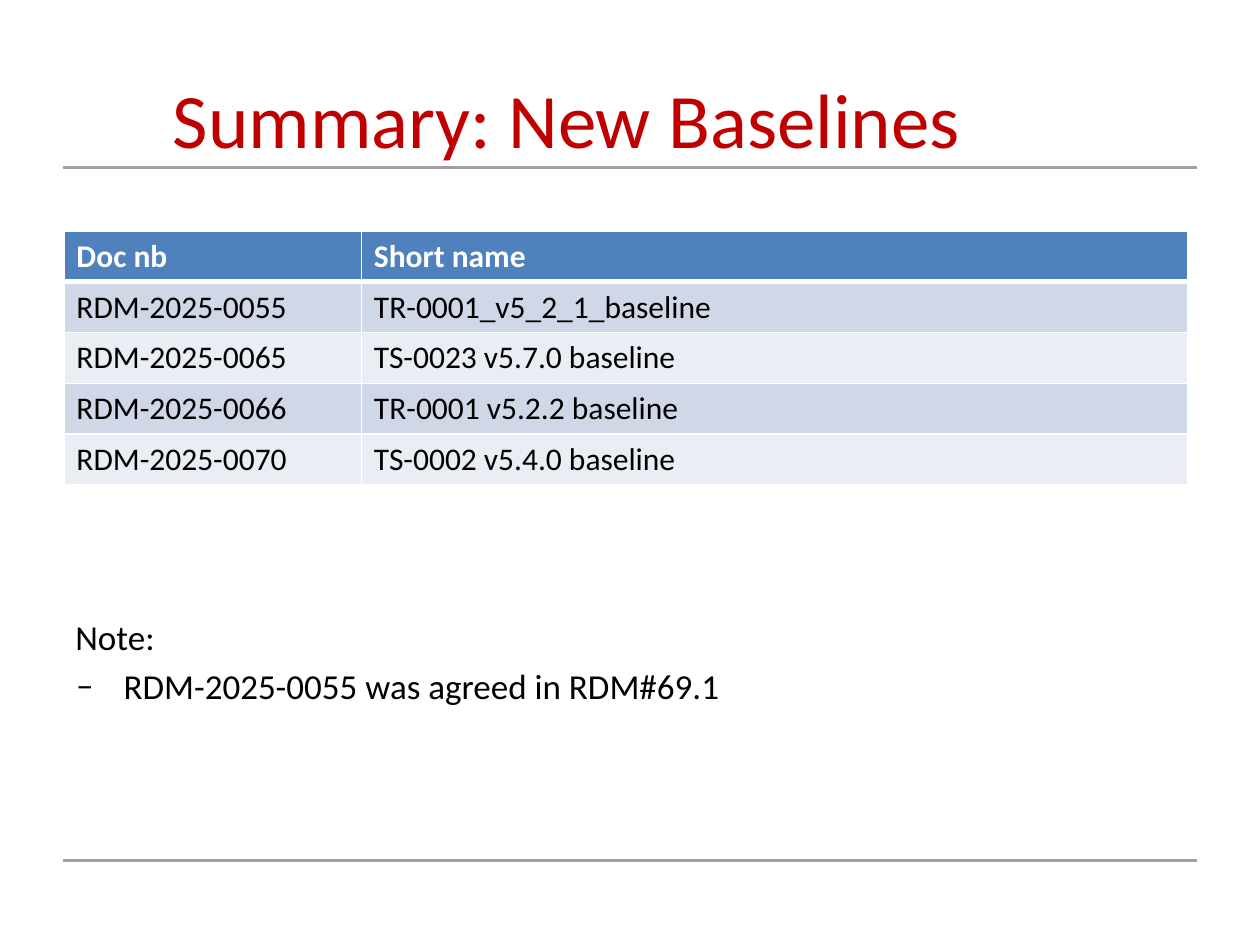
"""Build the summary slide that lists the new baselines."""
from typing import NamedTuple

import lxml.etree
import pptx
import pptx.dml.color
import pptx.enum.shapes
import pptx.enum.text
import pptx.oxml
import pptx.oxml.ns
import pptx.util

Pt = pptx.util.Pt
qn = pptx.oxml.ns.qn

FONT = "Calibri"
COLOURS = {
    "title": "C00000",
    "rule": "A0A0A3",
    "header": "4F81BD",
    "odd_row": "D0D8E8",
    "even_row": "E9EDF4",
    "white": "FFFFFF",
    "black": "000000",
}


class Baseline(NamedTuple):
    document: str
    short_name: str


class Note(NamedTuple):
    text: str
    left_margin: float
    indent: float
    bullet: str = ""


HEADER = Baseline("Doc nb", "Short name")
BASELINES = [
    Baseline("RDM-2025-0055", "TR-0001_v5_2_1_baseline"),
    Baseline("RDM-2025-0065", "TS-0023 v5.7.0 baseline"),
    Baseline("RDM-2025-0066", "TR-0001 v5.2.2 baseline"),
    Baseline("RDM-2025-0070", "TS-0002 v5.4.0 baseline"),
]
NOTES = [
    Note("Note:", 6.5, 0),
    Note("RDM-2025-0055 was agreed in RDM#69.1", 34, -27, "–"),
]
RULE_TOPS = [95.8, 491.8]
COLUMN_WIDTHS = [170, 472]
ROW_HEIGHT = 29


def colour(name: str) -> pptx.dml.color.RGBColor:
    return pptx.dml.color.RGBColor.from_string(COLOURS[name])


def format_runs(paragraph, size: float, colour_name: str, bold: bool = False) -> None:
    for run in paragraph.runs:
        run.font.name = FONT
        run.font.size = Pt(size)
        run.font.bold = bold
        run.font.color.rgb = colour(colour_name)


def add_text_frame(slide, left: float, top: float, width: float, height: float):
    shape = slide.shapes.add_textbox(Pt(left), Pt(top), Pt(width), Pt(height))
    shape.text_frame.word_wrap = True
    return shape.text_frame


def add_rule(slide, top: float) -> None:
    rule = slide.shapes.add_connector(
        pptx.enum.shapes.MSO_CONNECTOR.STRAIGHT, Pt(36), Pt(top), Pt(684), Pt(top)
    )
    rule.line.color.rgb = colour("rule")
    rule.line.width = Pt(1.75)
    lxml.etree.SubElement(rule._element.spPr, qn("a:effectLst"))


def add_title(slide, text: str) -> None:
    text_frame = add_text_frame(slide, 0, 36, 648, 90)
    text_frame.margin_top = Pt(5)
    text_frame.text = text
    paragraph = text_frame.paragraphs[0]
    paragraph.alignment = pptx.enum.text.PP_ALIGN.CENTER
    format_runs(paragraph, 44, "title")


def set_borders(cell, widths: dict[str, float]) -> None:
    properties = cell._tc.get_or_add_tcPr()
    for position, (side, width) in enumerate(widths.items()):
        line = lxml.etree.Element(qn(f"a:{side}"), w=str(Pt(width)))
        fill = lxml.etree.SubElement(line, qn("a:solidFill"))
        lxml.etree.SubElement(fill, qn("a:srgbClr"), val=COLOURS["white"])
        properties.insert(position, line)


def add_baseline_table(slide) -> None:
    rows = [HEADER, *BASELINES]
    table = slide.shapes.add_table(
        len(rows), len(COLUMN_WIDTHS), Pt(36.5), Pt(132),
        Pt(sum(COLUMN_WIDTHS)), Pt(ROW_HEIGHT * len(rows)),
    ).table
    for column, width in zip(table.columns, COLUMN_WIDTHS):
        column.width = Pt(width)
    for row_index, values in enumerate(rows):
        table.rows[row_index].height = Pt(ROW_HEIGHT)
        is_header = row_index == 0
        fill_name = "header" if is_header else ("even_row", "odd_row")[row_index % 2]
        borders = {
            "lnL": 1,
            "lnR": 1,
            "lnT": 3 if row_index == 1 else 1,
            "lnB": 3 if is_header else 1,
        }
        for column_index, value in enumerate(values):
            cell = table.cell(row_index, column_index)
            cell.text_frame.text = value
            cell.fill.solid()
            cell.fill.fore_color.rgb = colour(fill_name)
            set_borders(cell, borders)
            text_colour = "white" if is_header else "black"
            format_runs(cell.text_frame.paragraphs[0], 18, text_colour, is_header)


def add_notes_text(slide, notes: list[Note]) -> None:
    text_frame = add_text_frame(slide, 29.5, 348, 630, 114)
    text_frame.text = "\n".join(note.text for note in notes)
    for index, (paragraph, note) in enumerate(zip(text_frame.paragraphs, notes)):
        properties = paragraph._p.get_or_add_pPr()
        properties.set("marL", str(Pt(note.left_margin)))
        properties.set("indent", str(Pt(note.indent)))
        if note.bullet:
            lxml.etree.SubElement(properties, qn("a:buFont"), typeface=FONT)
            lxml.etree.SubElement(properties, qn("a:buChar"), char=note.bullet)
        paragraph.level = 1
        if index:
            paragraph.space_before = Pt(4)
        format_runs(paragraph, 20, "black")


def main() -> None:
    presentation = pptx.Presentation()
    presentation.slide_width = Pt(720)
    presentation.slide_height = Pt(540)
    slide = presentation.slides.add_slide(presentation.slide_layouts[6])
    for top in RULE_TOPS:
        add_rule(slide, top)
    add_title(slide, "Summary: New Baselines")
    add_baseline_table(slide)
    add_notes_text(slide, NOTES)
    presentation.save("out.pptx")


if __name__ == "__main__":
    main()
